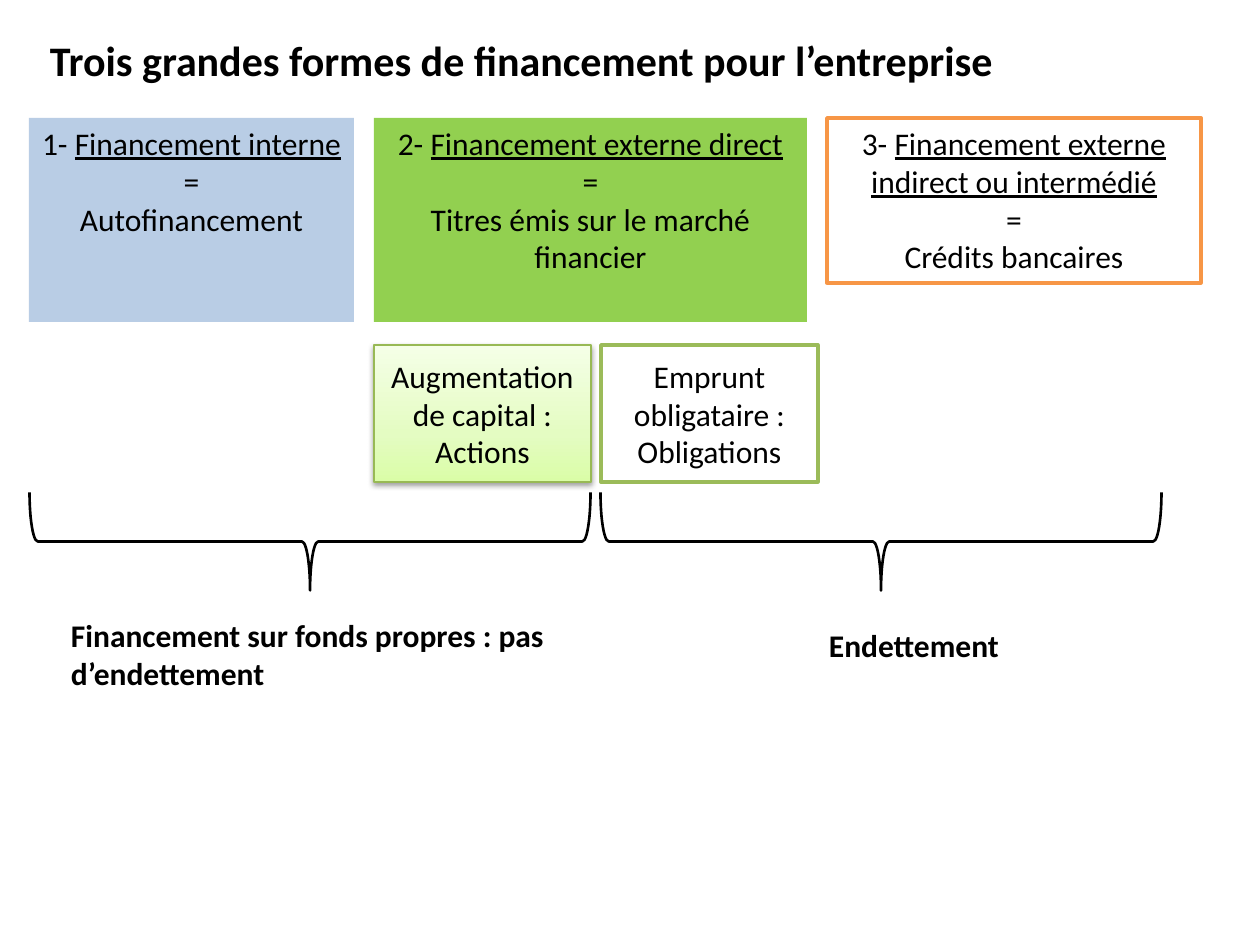
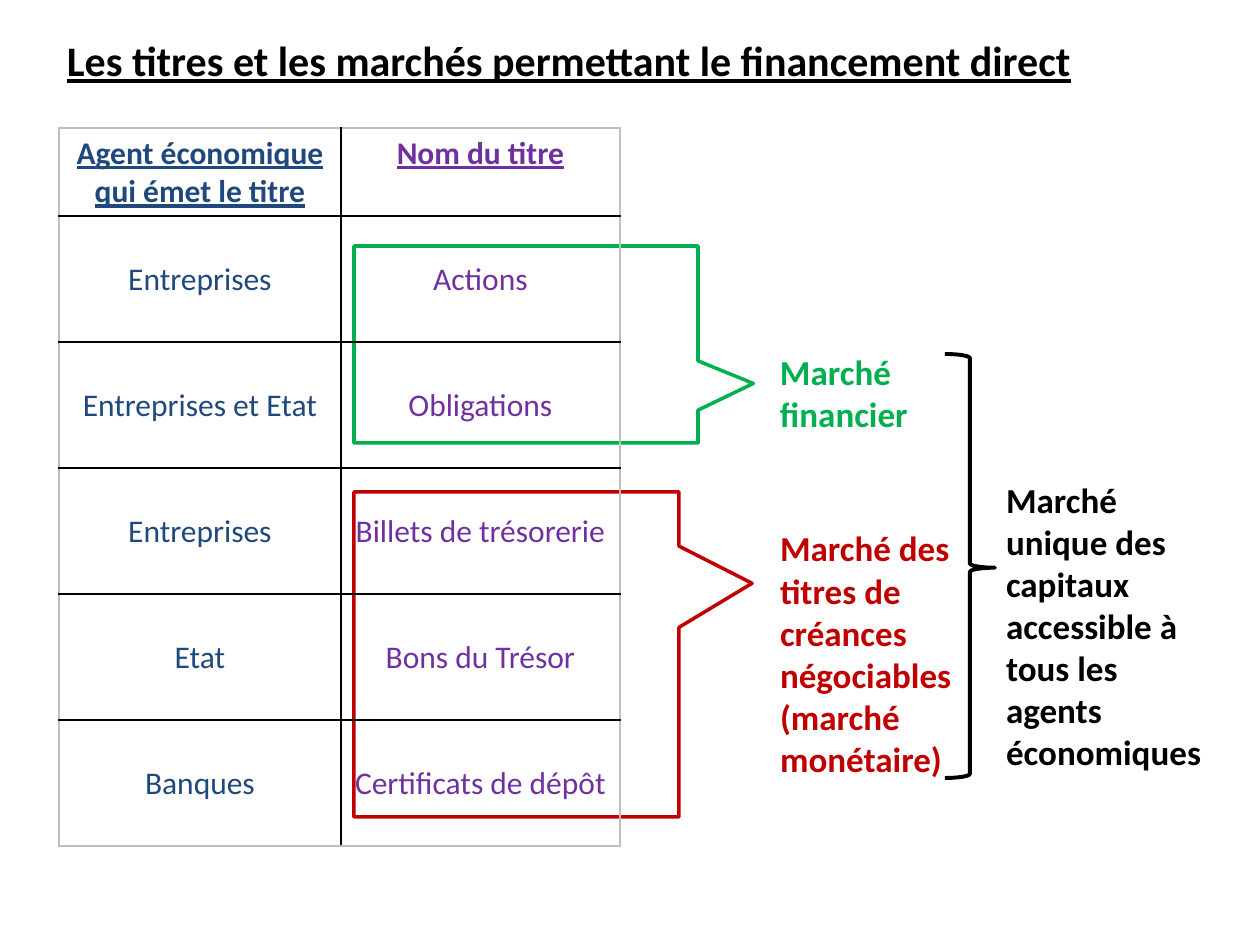
"""Two slides on how companies finance themselves and on the markets for securities."""
from copy import deepcopy
from dataclasses import dataclass

from lxml.etree import SubElement
from pptx import Presentation
from pptx.dml.color import RGBColor
from pptx.enum.shapes import MSO_SHAPE as Preset
from pptx.enum.text import MSO_ANCHOR as Anchor, PP_ALIGN as Align
from pptx.oxml.ns import qn
from pptx.util import Emu, Pt


@dataclass(frozen=True)
class Theme:
    font: str = "Calibri"
    title_size: int = 24
    market_size: int = 20
    body_size: int = 18
    black: str = "000000"
    white: str = "FFFFFF"
    grey: str = "BFBFBF"
    sky: str = "B9CDE5"
    lime: str = "92D050"
    orange: str = "F79646"
    olive: str = "9BBB59"
    leaf: str = "98B955"
    mint: tuple = ((0, "DAFDA7"), (0.35, "E4FCC2"), (1, "F5FFE7"))
    navy: str = "1F497D"
    purple: str = "7030A0"
    green: str = "00B050"
    red: str = "C00000"


THEME = Theme()
BLANK_LAYOUT = 6


def px(length):
    return Emu(round(length * 914400 / 126))


def rgb(color):
    return RGBColor.from_string(color)


def write(frame, lines, *, size=THEME.body_size, color=THEME.black, bold=False,
          underline=False, align=Align.LEFT):
    """Fill a frame; a line is a string or a (plain, underlined) pair."""
    for number, line in enumerate(lines):
        para = frame.paragraphs[0] if number == 0 else frame.add_paragraph()
        para.alignment = align
        pieces = [(line, underline)] if isinstance(line, str) else zip(line, (False, True))
        for text, underlined in pieces:
            span = para.add_run()
            span.text = text
            font = span.font
            font.name, font.size, font.bold = THEME.font, Pt(size), bold
            font.underline = underlined
            font.color.rgb = rgb(color)


def prepare(frame, anchor=Anchor.TOP):
    frame.word_wrap = True
    frame.vertical_anchor = anchor
    frame.margin_left = frame.margin_right = px(12)
    frame.margin_top = frame.margin_bottom = px(6)


def add_text(page, place, *lines, **style):
    box = page.shapes.add_textbox(*map(px, place))
    prepare(box.text_frame)
    write(box.text_frame, lines, **style)


def add_title(page, left, text, **style):
    add_text(page, (left, 29, 1200, 63), text, size=THEME.title_size, bold=True, **style)


def add_preset(page, preset, place, fill=None, line=None, width=2, adjust=()):
    shape = page.shapes.add_shape(preset, *map(px, place))
    shape.shadow.inherit = False
    if fill:
        shape.fill.solid()
        shape.fill.fore_color.rgb = rgb(fill)
    else:
        shape.fill.background()
    if line:
        shape.line.color.rgb = rgb(line)
        shape.line.width = Pt(width)
    else:
        shape.line.fill.background()
    for index, value in enumerate(adjust):
        shape.adjustments[index] = value
    return shape


def add_card(page, place, *lines, anchor=Anchor.TOP, **look):
    card = add_preset(page, Preset.RECTANGLE, place, **look)
    prepare(card.text_frame, anchor)
    write(card.text_frame, lines, align=Align.CENTER)
    return card


def add_brace_below(page, left, top, width, height):
    """Draw a brace that opens upwards over the given span."""
    shift = (width - height) // 2
    place = (left + shift, top - shift, height, width)
    brace = add_preset(page, Preset.RIGHT_BRACE, place, line=THEME.black, width=1.5)
    brace.rotation = 90


def set_gradient(shape, stops):
    shape.fill.gradient()
    shape.fill.gradient_angle = 90
    stop_list = shape.element.spPr.find(".//" + qn("a:gsLst"))
    stop_list.insert(1, deepcopy(stop_list[0]))
    for stop, (position, color) in zip(shape.fill.gradient_stops, stops):
        stop.position = position
        stop.color.rgb = rgb(color)


def add_shadow(shape):
    effects = shape.element.spPr.find(qn("a:effectLst"))
    shadow = SubElement(effects, qn("a:outerShdw"), blurRad="40000", dist="20000",
                        dir="5400000", rotWithShape="0")
    color = SubElement(shadow, qn("a:srgbClr"), val=THEME.black)
    SubElement(color, qn("a:alpha"), val="38000")


def set_borders(cell, colors):
    """Line a cell's left, right, top and bottom edges."""
    properties = cell._tc.get_or_add_tcPr()
    for index, (side, color) in enumerate(zip("LRTB", colors)):
        line = SubElement(properties, qn("a:ln" + side), w="12700")
        fill = SubElement(line, qn("a:solidFill"))
        SubElement(fill, qn("a:srgbClr"), val=color)
        properties.insert(index, line)


def add_grid(page, left, top, widths, heights, rows, colors):
    place = (left, top, sum(widths), sum(heights))
    table = page.shapes.add_table(len(rows), len(widths), *map(px, place)).table
    table.first_row = table.horz_banding = False
    for column, width in zip(table.columns, widths):
        column.width = px(width)
    for row, height in zip(table.rows, heights):
        row.height = px(height)
    last_row, last_column = len(rows) - 1, len(widths) - 1
    for r, texts in enumerate(rows):
        for c, text in enumerate(texts):
            cell, header = table.cell(r, c), r == 0
            cell.fill.background()
            cell.vertical_anchor = Anchor.TOP if header else Anchor.MIDDLE
            write(cell.text_frame, [text], color=colors[c], bold=header,
                  underline=header, align=Align.CENTER)
            outer = (c == 0, c == last_column, r == 0, r == last_row)
            set_borders(cell, [THEME.grey if edge else THEME.black for edge in outer])


def build_financing(page):
    add_title(page, 38, "Trois grandes formes de financement pour l’entreprise")
    add_card(page, (29, 118, 325, 204), ("1- ", "Financement interne"), "=",
             "Autofinancement", fill=THEME.sky)
    add_card(page, (374, 118, 433, 204), ("2- ", "Financement externe direct"), "=",
             "Titres émis sur le marché financier", fill=THEME.lime)
    add_card(page, (827, 118, 374, 165),
             ("3- ", "Financement externe indirect ou intermédié"), "=",
             "Crédits bancaires", fill=THEME.white, line=THEME.orange)
    shares = add_card(page, (374, 345, 217, 137), "Augmentation de capital : Actions",
                      anchor=Anchor.MIDDLE, line=THEME.leaf, width=0.75)
    set_gradient(shares, THEME.mint)
    add_shadow(shares)
    add_card(page, (601, 345, 217, 137), "Emprunt obligataire : Obligations",
             anchor=Anchor.MIDDLE, fill=THEME.white, line=THEME.olive)
    for left in (30, 601):
        add_brace_below(page, left, 492, 561, 98)
    add_text(page, (59, 610, 512, 89),
             "Financement sur fonds propres : pas d’endettement", bold=True)
    add_text(page, (817, 620, 217, 50), "Endettement", bold=True)


def build_markets(page):
    add_preset(page, Preset.RECTANGULAR_CALLOUT, (354, 492, 325, 325),
               line=THEME.red, adjust=(0.725, -0.219))
    add_preset(page, Preset.RECTANGULAR_CALLOUT, (354, 246, 344, 197),
               line=THEME.green, adjust=(0.661, 0.198))
    add_title(page, 55, "Les titres et les marchés permettant le financement direct",
              underline=True)
    rows = [
        ("Agent économique qui émet le titre", "Nom du titre"),
        ("Entreprises", "Actions"),
        ("Entreprises et Etat", "Obligations"),
        ("Entreprises", "Billets de trésorerie"),
        ("Etat", "Bons du Trésor"),
        ("Banques", "Certificats de dépôt"),
    ]
    add_grid(page, 59, 128, (282, 279), (88,) + (126,) * 5, rows,
             (THEME.navy, THEME.purple))
    label = {"size": THEME.market_size, "bold": True}
    add_text(page, (768, 344, 240, 97), "Marché financier", color=THEME.green, **label)
    add_text(page, (768, 521, 207, 267), "Marché des", "titres de", "créances",
             "négociables", "(marché", "monétaire)", color=THEME.red, **label)
    add_preset(page, Preset.RIGHT_BRACE, (945, 354, 50, 424), line=THEME.black,
               width=2.25, adjust=(0.083, 0.504))
    add_text(page, (994, 472, 230, 310),
             "Marché unique des capitaux accessible à tous les agents économiques", **label)


def main():
    deck = Presentation()
    deck.slide_width, deck.slide_height = px(1260), px(945)
    for build in (build_financing, build_markets):
        build(deck.slides.add_slide(deck.slide_layouts[BLANK_LAYOUT]))
    deck.save("out.pptx")


if __name__ == "__main__":
    main()
